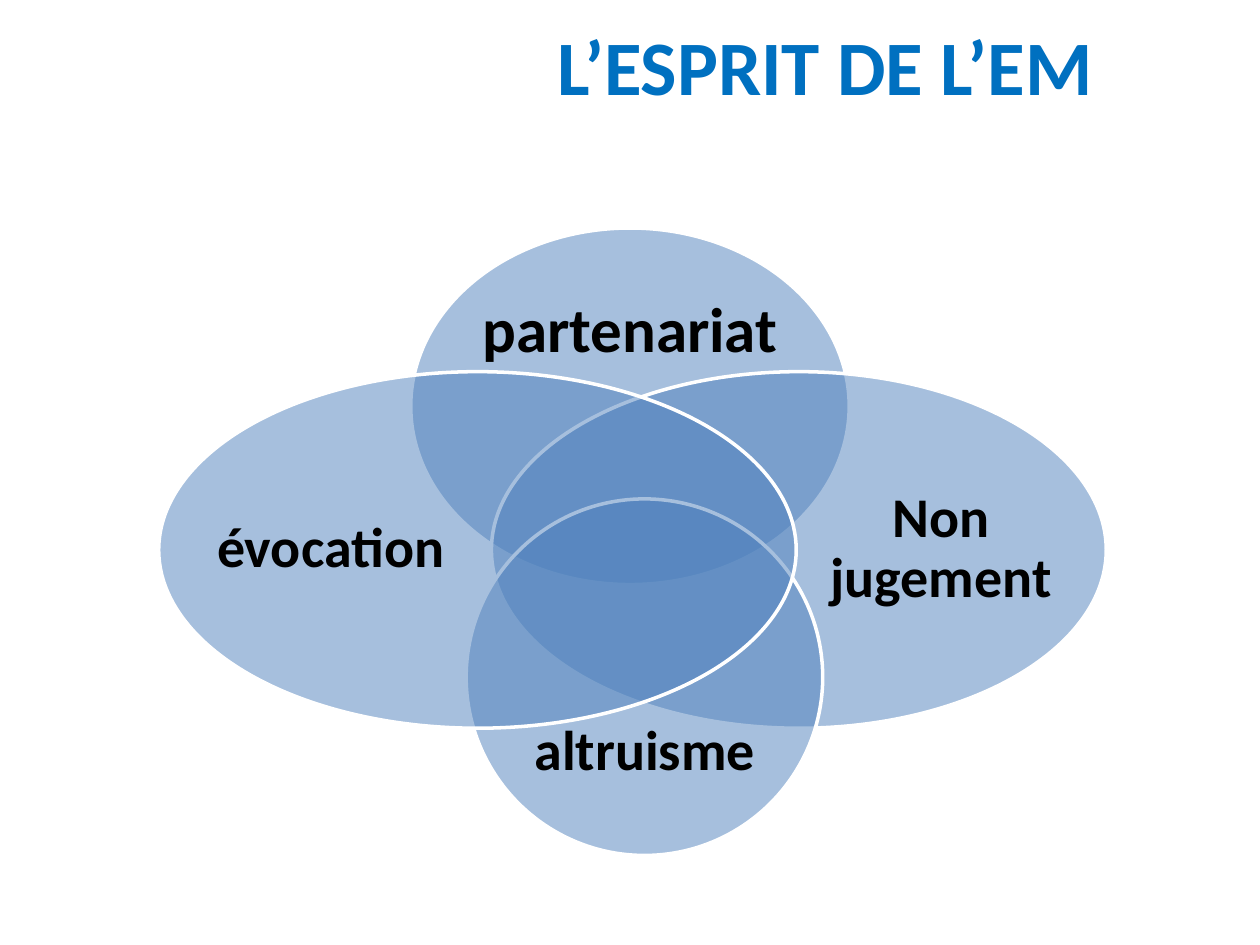
from typing import NamedTuple

from lxml import etree
from pptx import Presentation
from pptx.dml.color import RGBColor
from pptx.enum.shapes import MSO_SHAPE as Preset
from pptx.enum.text import MSO_ANCHOR as Anchor, PP_ALIGN as Align
from pptx.oxml.ns import qn
from pptx.util import Inches, Pt

FONT = "Calibri"
BLUE, TITLE_BLUE, WHITE, BLACK = "4F81BD", "0070C0", "FFFFFF", "000000"


class Area(NamedTuple):
    left: float
    top: float
    width: float
    height: float

    def lengths(self):
        return [Inches(value) for value in self]


class Petal(NamedTuple):
    label: str
    ellipse: Area
    text: Area
    size: int = 32


# Listed from back to front
PETALS = [
    Petal("partenariat", Area(3.26, 1.81, 3.48, 2.83), Area(3.66, 2.19, 2.68, 0.9), 36),
    Petal("Non jugement", Area(3.9, 2.95, 4.88, 2.83), Area(6.53, 3.27, 1.88, 2.18)),
    Petal("altruisme", Area(3.7, 3.96, 2.83, 2.83), Area(4.03, 5.52, 2.18, 0.9)),
    Petal("évocation", Area(1.26, 2.95, 5.06, 2.83), Area(1.65, 3.27, 1.95, 2.18)),
]


def color(value: str) -> RGBColor:
    return RGBColor.from_string(value)


def add_text(page, text: str, area: Area, *, size: int, ink: str = BLACK,
             spacing: float = 1.0) -> None:
    """Add a line of bold text, centred both ways in its area."""
    box = page.shapes.add_textbox(*area.lengths())
    frame = box.text_frame
    frame.word_wrap = True
    frame.vertical_anchor = Anchor.MIDDLE
    frame.margin_left = frame.margin_right = 0
    frame.margin_top = frame.margin_bottom = 0
    para = frame.paragraphs[0]
    para.alignment = Align.CENTER
    para.line_spacing = spacing
    span = para.add_run()
    span.text = text
    span.font.name = FONT
    span.font.size = Pt(size)
    span.font.bold = True
    span.font.color.rgb = color(ink)


def add_ellipse(page, area: Area) -> None:
    """Add a half-transparent ellipse with a white outline."""
    ellipse = page.shapes.add_shape(Preset.OVAL, *area.lengths())
    ellipse.shadow.inherit = False
    ellipse.fill.solid()
    ellipse.fill.fore_color.rgb = color(BLUE)
    fill_color = ellipse.fill._xPr.find(qn("a:solidFill"))[0]
    etree.SubElement(fill_color, qn("a:alpha"), val="50000")
    ellipse.line.color.rgb = color(WHITE)
    ellipse.line.width = Pt(2)


def main() -> None:
    deck = Presentation()
    deck.slide_width, deck.slide_height = Inches(10), Inches(7.5)
    page = deck.slides.add_slide(deck.slide_layouts[6])

    # Venn diagram
    for petal in PETALS:
        add_ellipse(page, petal.ellipse)
        add_text(page, petal.label, petal.text, size=petal.size, spacing=0.9)

    # Title
    add_text(page, "L’ESPRIT DE L’EM ", Area(2.12, -0.11, 9, 1.25),
             size=44, ink=TITLE_BLUE)

    deck.save("out.pptx")


if __name__ == "__main__":
    main()
